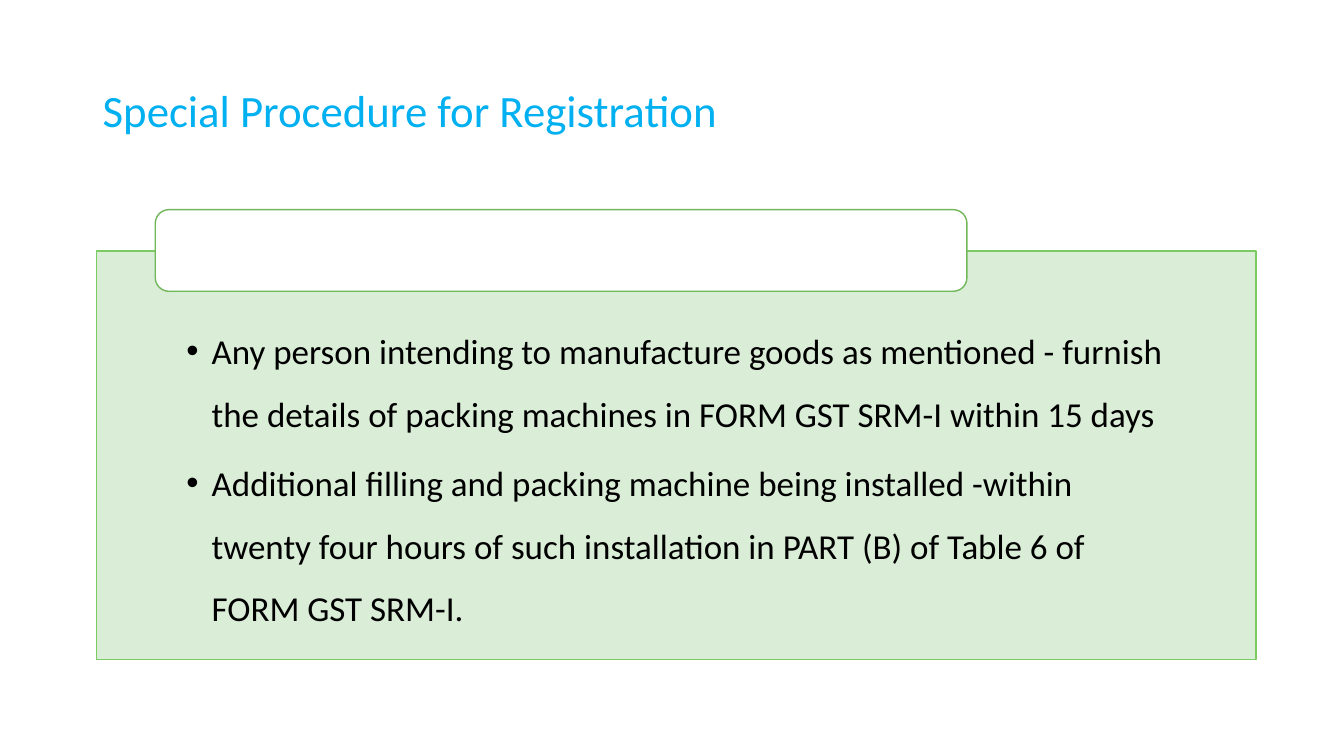
"""Build the slide on the special procedure for registration."""
import pptx
import pptx.util
import pptx.dml.color
import pptx.enum.shapes
import pptx.enum.text
import pptx.oxml
import pptx.oxml.ns

Inches, Pt = pptx.util.Inches, pptx.util.Pt
RGBColor = pptx.dml.color.RGBColor
KIND = pptx.enum.shapes.MSO_SHAPE
ALIGN = pptx.enum.text.PP_ALIGN
ANCHOR = pptx.enum.text.MSO_ANCHOR

TITLE = "Special Procedure for Registration"
POINTS = [
    "Any person intending to manufacture goods as mentioned - furnish the details "
    "of packing machines in FORM GST SRM-I within 15 days",
    "Additional filling and packing machine being installed -within twenty four "
    "hours of such installation in PART (B) of Table 6 of FORM GST SRM-I.",
]
FONT = "Calibri"
BLUE = RGBColor(0x00, 0xB0, 0xF0)
BLACK = RGBColor(0x00, 0x00, 0x00)
WHITE = RGBColor(0xFF, 0xFF, 0xFF)
PALE = RGBColor(0xD7, 0xEC, 0xD3)
LIME = RGBColor(0x7C, 0xCA, 0x62)
GREEN = RGBColor(0x71, 0xB7, 0x59)


def add_box(slide, kind, area, fill, line):
    box = slide.shapes.add_shape(kind, *map(Inches, area))
    box.shadow.inherit = False
    box.fill.solid()
    box.fill.fore_color.rgb = fill
    box.line.color.rgb = line
    box.line.width = Pt(1)
    return box


def style(par, size, color, space):
    par.alignment = ALIGN.LEFT
    par.line_spacing = space
    for run in par.runs:
        run.font.name = FONT
        run.font.size = Pt(size)
        run.font.color.rgb = color


def add_bullet(par):
    props = par._p.get_or_add_pPr()
    props.set("marL", str(Inches(0.25)))
    props.set("indent", str(-Inches(0.25)))
    space = pptx.oxml.ns.nsdecls("a")
    for tag in ('buFont %s typeface="Arial"', 'buChar %s char="•"'):
        props.append(pptx.oxml.parse_xml(f"<a:{tag % space}/>"))


def add_title(slide):
    box = slide.shapes.add_textbox(*map(Inches, (0.92, 0.4, 11.5, 1.45)))
    frame = box.text_frame
    frame.word_wrap = True
    frame.vertical_anchor = ANCHOR.MIDDLE
    frame.text = TITLE
    style(frame.paragraphs[0], 32, BLUE, 0.9)


def add_panel(slide):
    panel = add_box(slide, KIND.RECTANGLE, (0.96, 2.49, 11.5, 4.05), PALE, LIME)
    color = panel.fill._xPr.find(".//" + pptx.oxml.ns.qn("a:srgbClr"))
    space = pptx.oxml.ns.nsdecls("a")
    color.append(pptx.oxml.parse_xml(f'<a:alpha {space} val="90000"/>'))
    frame = panel.text_frame
    frame.word_wrap = True
    frame.vertical_anchor = ANCHOR.TOP
    frame.margin_left = frame.margin_right = Inches(0.89)
    frame.margin_top, frame.margin_bottom = Inches(0.57), Inches(0.19)
    frame.text = "\n".join(POINTS)
    for par in frame.paragraphs:
        style(par, 25, BLACK, 1.5)
        par.space_after = Pt(4)
        add_bullet(par)


def main():
    deck = pptx.Presentation()
    deck.slide_width, deck.slide_height = Inches(13.33), Inches(7.5)
    slide = deck.slides.add_slide(deck.slide_layouts[6])
    add_title(slide)
    add_panel(slide)
    add_box(slide, KIND.ROUNDED_RECTANGLE, (1.54, 2.08, 8.05, 0.81), WHITE, GREEN)
    deck.save("out.pptx")


if __name__ == "__main__":
    main()
